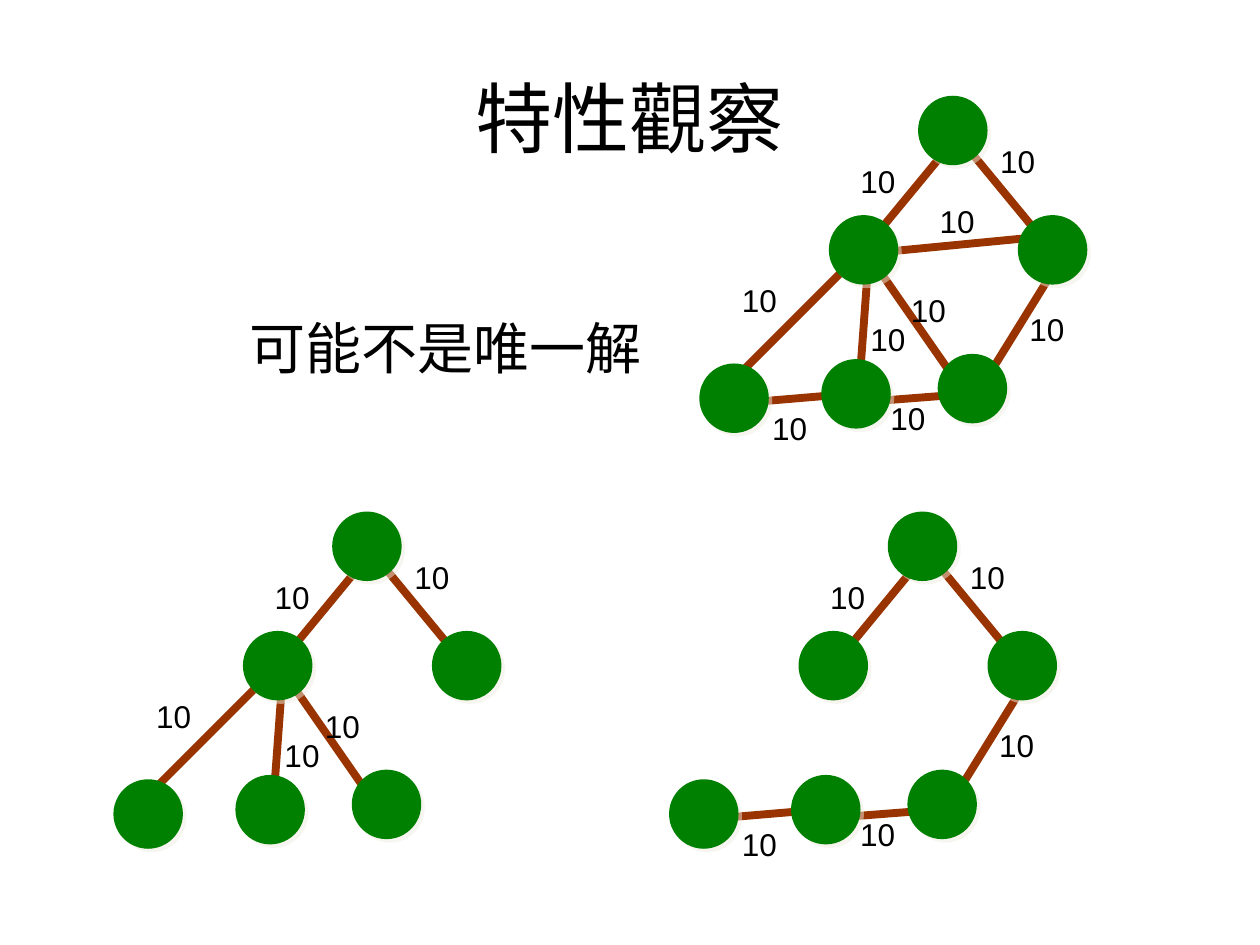
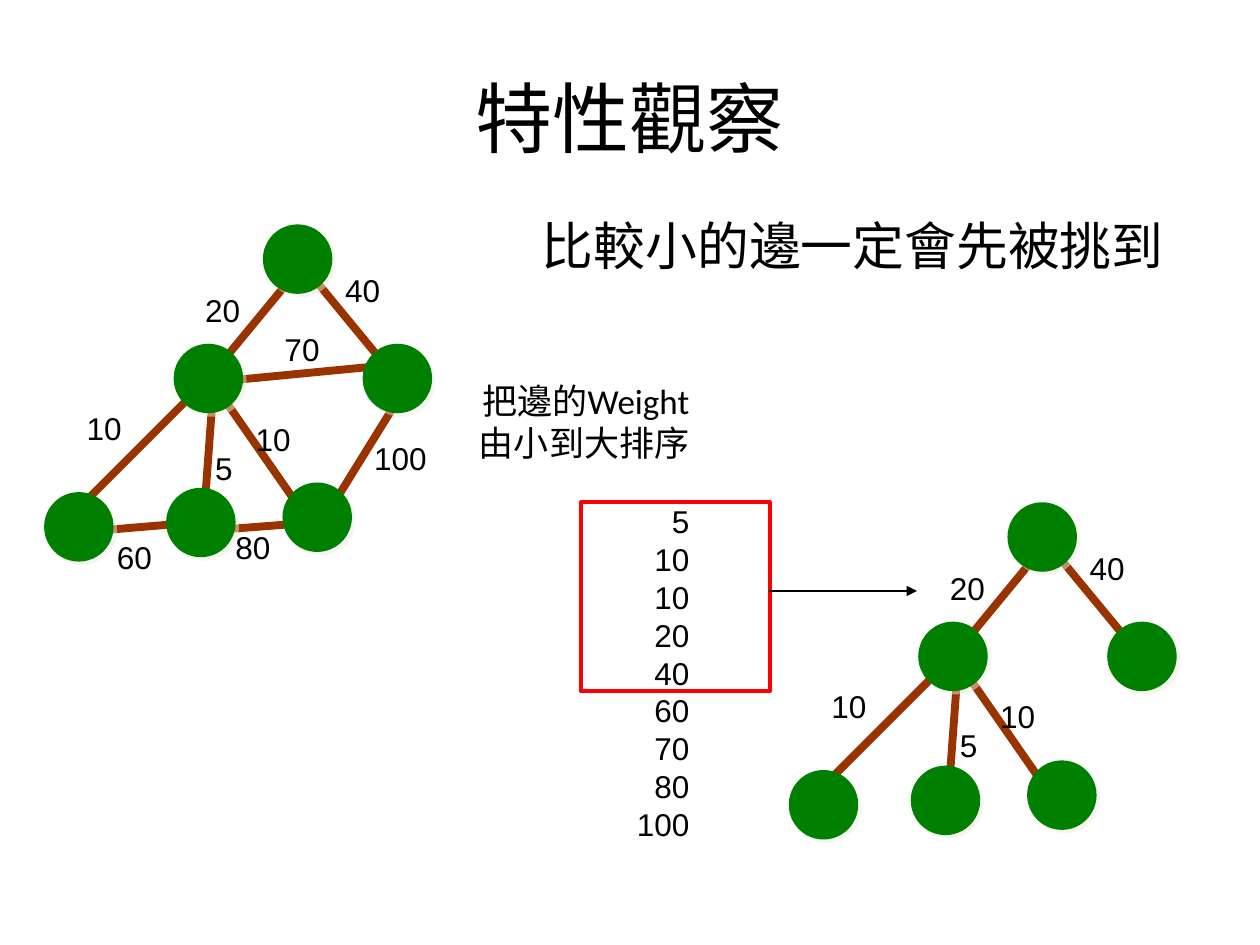
from lxml.etree import SubElement
from pptx import Presentation
from pptx.dml.color import RGBColor
from pptx.enum.shapes import MSO_CONNECTOR, MSO_SHAPE
from pptx.enum.text import MSO_ANCHOR, MSO_AUTO_SIZE, PP_ALIGN
from pptx.oxml import parse_xml
from pptx.oxml.ns import nsdecls, qn
from pptx.util import Pt

BLACK, GREEN, BROWN, RED = "000000", "008000", "993300", "FF0000"
CJK = "Noto Sans CJK SC"
DOT = 39.7

# Places below are relative to the top left corner of a graph.
NODES = {
    "top": (125, 0), "left": (74, 68.2), "right": (182, 68.2),
    "low": (0, 153), "mid": (69.7, 150.5), "end": (136.2, 147.5),
}
# Edge name: start, finish, corner of its weight label
EDGES = {
    "low-mid": ((90.7, 170), (23, 175.7), (34.5, 175.7)),
    "mid-end": ((159, 170), (85, 175.7), (102.2, 170)),
    "right-end": ((204.5, 96.5), (159, 170), (181.5, 119.2)),
    "left-right": ((210.2, 79.2), (90.7, 90.7), (130.3, 57)),
    "left-low": ((85.5, 96.5), (23, 159), (17.3, 102.2)),
    "left-mid": ((96.5, 96.5), (90.7, 175.7), (90.7, 124.6)),
    "left-end": ((96.5, 90.7), (147.6, 164.2), (113.8, 108)),
    "top-left": ((147.6, 23), (96.5, 85), (85, 34.5)),
    "top-right": ((147.6, 23), (198.7, 85), (164.9, 23)),
}
TREE = ["left-low", "left-mid", "left-end", "top-left", "top-right"]
CHAIN = ["low-mid", "mid-end", "right-end", "top-left", "top-right"]
WEIGHTS = {
    "low-mid": 60, "mid-end": 80, "right-end": 100, "left-right": 70,
    "left-low": 10, "left-mid": 5, "left-end": 10,
    "top-left": 20, "top-right": 40,
}


def color(code):
    return RGBColor.from_string(code)


def frame(shapes, x, y, w, h, wrap=True):
    body = shapes.add_textbox(Pt(x), Pt(y), Pt(w), Pt(h)).text_frame
    body.word_wrap = wrap
    return body


def write(body, text, size=18, font="Arial", align=PP_ALIGN.LEFT,
          pitch=None, before=0):
    """Add one paragraph, using the empty first one if it is free."""
    para = body.paragraphs[0]
    if para.runs:
        para = body.add_paragraph()
    para.alignment = align
    para.space_before = Pt(before)
    if pitch:
        para.line_spacing = Pt(pitch)
    run = para.add_run()
    run.text = text
    run.font.size = Pt(size)
    run.font.name = font
    run.font.color.rgb = color(BLACK)
    if font == CJK:
        SubElement(run.font._element, qn("a:ea")).set("typeface", font)


def link(shapes, start, end, code, width):
    line = shapes.add_connector(
        MSO_CONNECTOR.STRAIGHT, *(Pt(v) for v in (*start, *end)))
    line.line.color.rgb = color(code)
    line.line.width = Pt(width)
    SubElement(line._element.spPr, qn("a:effectLst"))
    return line


def node(shapes, x, y):
    dot = shapes.add_shape(MSO_SHAPE.OVAL, Pt(x), Pt(y), Pt(DOT), Pt(DOT))
    dot.fill.solid()
    dot.fill.fore_color.rgb = color(GREEN)
    dot.line.fill.background()
    dot._element.spPr.append(parse_xml(
        f'<a:effectLst {nsdecls("a")}>'
        '<a:outerShdw dist="35560" dir="2700000" algn="ctr" rotWithShape="0">'
        '<a:srgbClr val="EEECE1"><a:alpha val="50000"/></a:srgbClr>'
        '</a:outerShdw></a:effectLst>'))


def graph(slide, x, y, weights):
    """Draw all nodes, and the edges named in weights, from corner x, y."""
    shapes = slide.shapes.add_group_shape().shapes

    def shift(spot):
        return x + spot[0], y + spot[1]

    for name in weights:
        start, end, _ = EDGES[name]
        link(shapes, shift(start), shift(end), BROWN, 4.5)
    for spot in NODES.values():
        node(shapes, *shift(spot))
    for name, weight in weights.items():
        label = str(weight)
        body = frame(shapes, *shift(EDGES[name][2]),
                     14.4 + 10 * len(label), 28.8, wrap=False)
        body.auto_size = MSO_AUTO_SIZE.SHAPE_TO_FIT_TEXT
        write(body, label)


def title(slide):
    body = frame(slide.shapes, 36, 21.6, 648, 90)
    body.vertical_anchor = MSO_ANCHOR.MIDDLE
    write(body, "特性觀察", size=44, font=CJK, align=PP_ALIGN.CENTER)


def claim(slide, text, x, y, w, h, size, indent):
    body = frame(slide.shapes, x, y, w, h)
    body.margin_left = Pt(7.2 + indent)
    body.margin_top = 0
    write(body, text, size=size, font=CJK)


def ranking(slide, x, y):
    """List the sorted weights, frame the chosen ones and point onwards."""
    shapes = slide.shapes
    body = frame(shapes, x, y, 234, 293)
    for text in ("把邊的Weight", "由小到大排序"):
        write(body, text, size=20, font="Calibri",
              align=PP_ALIGN.RIGHT, pitch=24)
    for rank, weight in enumerate(sorted(WEIGHTS.values())):
        write(body, str(weight), align=PP_ALIGN.RIGHT, pitch=21.6,
              before=0 if rank else 22.4)

    box = shapes.add_shape(MSO_SHAPE.RECTANGLE, Pt(x + 165), Pt(y + 74),
                           Pt(108), Pt(108))
    box.shadow.inherit = False
    box.fill.background()
    box.line.color.rgb = color(RED)
    box.line.width = Pt(2.25)

    level = y + 124.6
    arrow = link(shapes, (x + 272.5, level), (x + 357, level), BLACK, 0.75)
    SubElement(arrow.line._get_or_add_ln(), qn("a:tailEnd")).set(
        "type", "triangle")


def ties(deck):
    slide = deck.slides.add_slide(deck.slide_layouts[6])
    title(slide)
    claim(slide, "可能不是唯一解", 36, 179.3, 648, 68.4, 32, 99.4)
    graph(slide, 399.6, 54.7, dict.fromkeys(EDGES, 10))
    graph(slide, 64.8, 292.3, dict.fromkeys(TREE, 10))
    graph(slide, 382.3, 292.3, dict.fromkeys(CHAIN, 10))


def order(deck):
    slide = deck.slides.add_slide(deck.slide_layouts[6])
    title(slide)
    claim(slide, "比較小的邊一定會先被挑到", 275, 122.4, 412.6, 56.9, 29.6, 27.4)
    graph(slide, 25.2, 128.2, WEIGHTS)
    graph(slide, 450.7, 287, {name: WEIGHTS[name] for name in TREE})
    ranking(slide, 167, 213.1)


def main():
    deck = Presentation()
    deck.slide_width, deck.slide_height = Pt(720), Pt(540)
    ties(deck)
    order(deck)
    deck.save("out.pptx")


if __name__ == "__main__":
    main()
